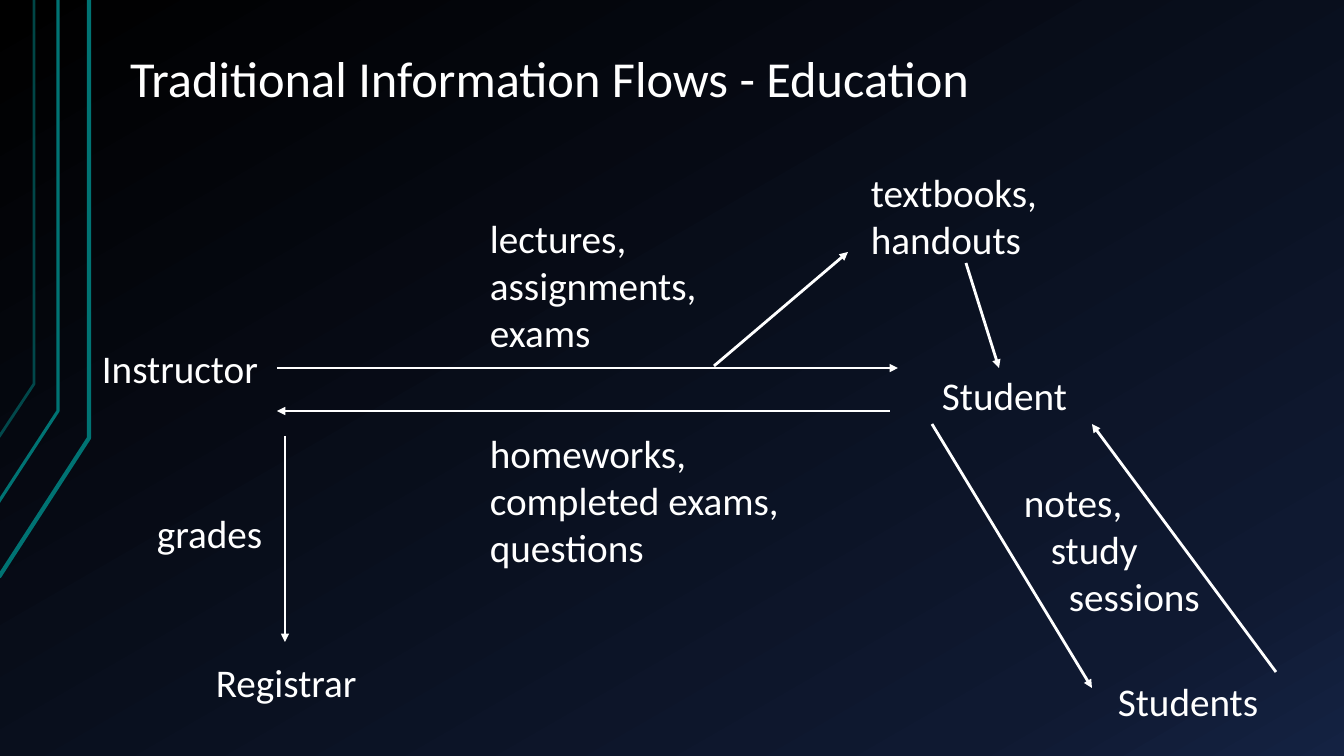
from copy import deepcopy

from lxml.etree import SubElement
from pptx import Presentation
from pptx.dml.color import RGBColor
from pptx.enum.shapes import MSO_CONNECTOR
from pptx.enum.text import MSO_ANCHOR, MSO_AUTO_SIZE, PP_ALIGN
from pptx.oxml.ns import qn
from pptx.util import Emu, Pt

SCALE = 914400 / 100.8
WHITE = "FFFFFF"
TITLE = ("Traditional Information Flows - Education", (117, 8, 1047, 107))
BACKGROUND = [(0, "000000"), (0.85, "0F1931"), (1, "142242")]
RAILS = [
    ([(-1, 577), (89, 438), (89, 0)], 3, 100),
    ([(-2, 503), (58, 411), (58, 0)], 2.25, 100),
    ([(-1, 437), (34, 384), (34, 0)], 2, 60),
]
LABELS = [
    ([("Instructor", 0)], (92, 339, 227, 57)),
    ([("Student", 0)], (932, 366, 168, 57)),
    ([("lectures, assignments, exams", 0)], (480, 209, 246, 152)),
    ([("homeworks,", 0), ("completed exams,", 0), ("questions", 0)], (480, 424, 327, 152)),
    ([("Students", 0)], (1108, 672, 185, 57)),
    ([("notes,", 0), ("study", 27), ("sessions", 45)], (1014, 473, 267, 152)),
    ([("textbooks, handouts", 0)], (861, 163, 246, 105)),
    ([("Registrar", 0)], (206, 653, 171, 57)),
    ([("grades", 0)], (147, 504, 171, 57)),
]
FLOWS = [
    (277, 368, 898, 368),
    (890, 411, 277, 411),
    (932, 424, 1092, 688),
    (1276, 672, 1092, 424),
    (966, 263, 999, 368),
    (714, 366, 848, 252),
    (285, 436, 285, 642),
]


def px(length):
    return Emu(round(length * SCALE))


def color(value):
    return RGBColor.from_string(value)


def apply(target, values):
    for name, value in values.items():
        setattr(target, name, value)


def write(para, text, size):
    span = para.add_run()
    span.text = text
    apply(span.font, {"name": "Calibri", "size": Pt(size)})
    span.font.color.rgb = color(WHITE)


def paint_background(page):
    fill = page.background.fill
    fill.gradient()
    fill.gradient_angle = 300
    stops = page.element.find(".//" + qn("a:gsLst"))
    stops.append(deepcopy(stops[-1]))
    for stop, (position, value) in zip(fill.gradient_stops, BACKGROUND):
        stop.position = position
        stop.color.rgb = color(value)


def add_title(page):
    text, place = TITLE
    title = page.shapes.title
    apply(title, dict(zip(("left", "top", "width", "height"), map(px, place))))
    apply(title.text_frame, {
        "auto_size": MSO_AUTO_SIZE.NONE, "vertical_anchor": MSO_ANCHOR.BOTTOM,
        "word_wrap": True, "margin_left": px(13), "margin_right": px(13),
        "margin_top": px(7), "margin_bottom": px(7),
    })
    para = title.text_frame.paragraphs[0]
    apply(para, {"alignment": PP_ALIGN.LEFT, "line_spacing": 0.9})
    write(para, text, 36)


def add_rail(page, points, width, opacity):
    builder = page.shapes.build_freeform(*points[0], scale=SCALE)
    builder.add_line_segments(points[1:], close=False)
    rail = builder.convert_to_shape()
    rail.shadow.inherit = False
    rail.fill.background()
    rail.line.width = Pt(width)
    rail.line.color.rgb = color("007373")
    if opacity < 100:
        tint = rail.element.spPr.find(".//" + qn("a:srgbClr"))
        SubElement(tint, qn("a:alpha")).set("val", str(opacity * 1000))


def add_label(page, lines, place):
    box = page.shapes.add_textbox(*map(px, place))
    frame = box.text_frame
    apply(frame, {"word_wrap": True, "auto_size": MSO_AUTO_SIZE.SHAPE_TO_FIT_TEXT})
    for index, (text, indent) in enumerate(lines):
        para = frame.add_paragraph() if index else frame.paragraphs[0]
        if indent:
            para._p.get_or_add_pPr().set("marL", str(px(indent)))
        write(para, text, 28)


def add_flow(page, ends):
    arrow = page.shapes.add_connector(MSO_CONNECTOR.STRAIGHT, *map(px, ends))
    arrow.line.width = Pt(2)
    arrow.line.color.rgb = color(WHITE)
    SubElement(arrow.line._get_or_add_ln(), qn("a:tailEnd")).set("type", "triangle")
    SubElement(arrow._element.spPr, qn("a:effectLst"))


def main():
    deck = Presentation()
    apply(deck, {"slide_width": px(1344), "slide_height": px(756)})
    page = deck.slides.add_slide(deck.slide_layouts[5])
    paint_background(page)
    add_title(page)
    for rail in RAILS:
        add_rail(page, *rail)
    for label in LABELS:
        add_label(page, *label)
    for ends in FLOWS:
        add_flow(page, ends)
    deck.save("out.pptx")


if __name__ == "__main__":
    main()
